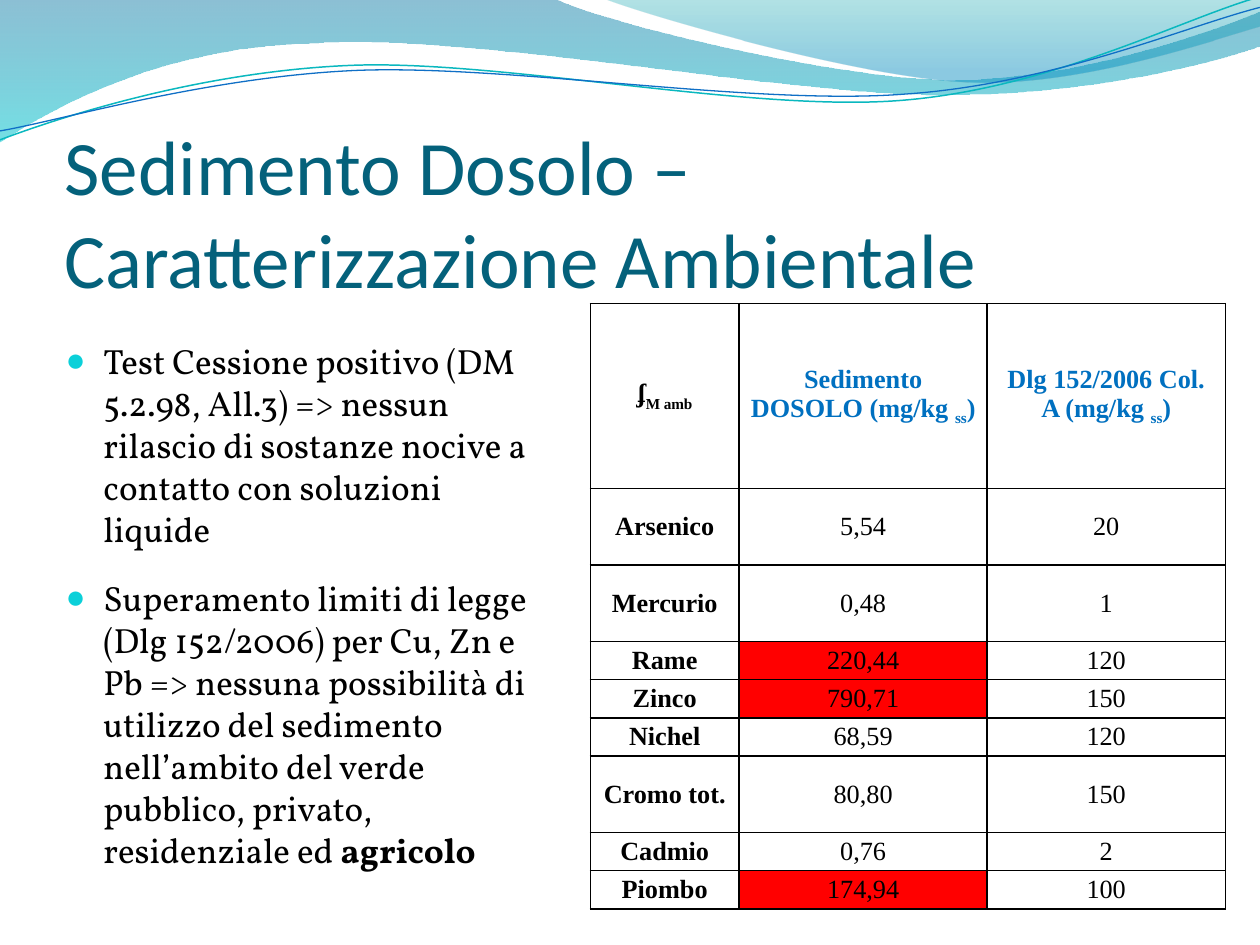
from lxml import etree
from pptx import Presentation
from pptx.dml.color import RGBColor
from pptx.enum.text import MSO_ANCHOR, MSO_AUTO_SIZE, PP_ALIGN
from pptx.oxml import parse_xml
from pptx.oxml.ns import nsdecls, qn
from pptx.util import Cm, Pt

LEFT, CENTER = PP_ALIGN.LEFT, PP_ALIGN.CENTER
MIDDLE, BOTTOM = MSO_ANCHOR.MIDDLE, MSO_ANCHOR.BOTTOM
NO_FIT = MSO_AUTO_SIZE.NONE


def rgb(color):
    return RGBColor.from_string(color)


def add_run(p, text, color, baseline=0, **fmt):
    r = p.add_run()
    r.text = text
    for key, value in fmt.items():
        setattr(r.font, key, value)
    r.font.color.rgb = rgb(color)
    if baseline:
        r.font._element.set("baseline", str(baseline * 1000))


prs = Presentation()
prs.slide_width, prs.slide_height = Cm(25.4), Cm(19.05)
s = prs.slides.add_slide(prs.slide_layouts[1])
s.background.fill.solid()
s.background.fill.fore_color.rgb = rgb("FFFFFF")
title, body = s.shapes.title, s.placeholders[1]

waves = [
    {"start": (0, 0), "stops": [(0, "0074A1", 45), (100, "00C6CF", 55)],
     "steps": [(11.18, -0.03), (12.09, 0.43, 16.87, 1.6, 19.25, 1.6),
               (21.67, 1.6, 24.33, 0.66, 25.4, 0.23), (25.43, 0.91),
               (24.97, 1.12, 22.1, 1.93, 18.95, 1.91),
               (15.8, 1.91, 9.7, 0.71, 6.53, 0.86),
               (3.28, 0.91, 1.17, 2.11, -0.03, 2.87), (0, 0)]},
    {"start": (12.17, -0.03), "stops": [(0, "00A1A9", 30), (80, "008BBF", 45)],
     "steps": [(12.93, 0.28, 17.32, 1.57, 19.53, 1.65),
               (21.74, 1.75, 24.41, 0.81, 25.4, 0.53), (25.4, 0), (12.17, -0.03)]},
    {"start": (0, 2.82), "line": ("0AB8BF", 0.85),
     "steps": [(1.22, 2.36, 4.01, 1.45, 7.04, 1.32),
               (10.03, 1.19, 15.06, 2.26, 18.11, 2.03),
               (21.16, 1.8, 23.83, 0.38, 25.35, -0.05)]},
    {"start": (0, 2.64), "line": ("0F6FC6", 0.75),
     "steps": [(1.19, 2.44, 4.17, 1.55, 7.19, 1.42),
               (10.24, 1.3, 15.16, 2.13, 18.21, 1.9),
               (21.23, 1.7, 23.9, 0.53, 25.4, 0.15)]},
]
for wave in waves:
    points = [(Cm(x), Cm(y)) for step in wave["steps"]
              for x, y in zip(step[::2], step[1::2])]
    x, y = wave["start"]
    builder = s.shapes.build_freeform(Cm(x), Cm(y))
    builder.add_line_segments(points, close="stops" in wave)
    sp = builder.convert_to_shape()
    sp.shadow.inherit = False
    spPr = sp._element.spPr
    segments = iter(list(spPr.iter(qn("a:lnTo"))))
    for step in wave["steps"]:
        first = next(segments)
        if len(step) == 6:
            first.tag = qn("a:cubicBezTo")
            for segment in (next(segments), next(segments)):
                first.append(segment[0])
                segment.getparent().remove(segment)
    sp.fill.background()
    if "line" in wave:
        color, width = wave["line"]
        sp.line.color.rgb = rgb(color)
        sp.line.width = Pt(width)
    else:
        sp.line.fill.background()
        stops = "".join(
            f'<a:gs pos="{pos * 1000}"><a:srgbClr val="{color}">'
            f'<a:alpha val="{alpha * 1000}"/></a:srgbClr></a:gs>'
            for pos, color, alpha in wave["stops"])
        spPr.replace(spPr.find(qn("a:noFill")), parse_xml(
            f'<a:gradFill {nsdecls("a")}><a:gsLst>{stops}</a:gsLst>'
            '<a:lin ang="5400000" scaled="0"/></a:gradFill>'))

frames = [(title, (1.3, 2.31, 22.86, 3.81)), (body, (1.07, 6.71, 10.24, 11.99))]
for sp, box in frames:
    for key, value in zip(("left", "top", "width", "height"), box):
        setattr(sp, key, Cm(value))
    sp.text_frame.auto_size = NO_FIT
    sp.text_frame.word_wrap = True

tf = title.text_frame
title_format = {"vertical_anchor": BOTTOM, "margin_left": 0, "margin_right": 0,
                "margin_top": Cm(0.13), "margin_bottom": 0}
for key, value in title_format.items():
    setattr(tf, key, value)
p = tf.paragraphs[0]
p.alignment = LEFT
title_font = {"name": "Calibri", "size": Pt(44)}
add_run(p, "Sedimento Dosolo – ", "04617B", **title_font)
p.add_line_break()
add_run(p, "Caratterizzazione Ambientale", "04617B", **title_font)
s.shapes._spTree.append(title._element)

rows = [
    ("Arsenico", "5,54", "20", 1.54),
    ("Mercurio", "0,48", "1", 1.54),
    ("Rame", "220,44", "120", 0.77),
    ("Zinco", "790,71", "150", 0.77),
    ("Nichel", "68,59", "120", 0.77),
    ("Cromo tot.", "80,80", "150", 1.54),
    ("Cadmio", "0,76", "2", 0.77),
    ("Piombo", "174,94", "100", 0.77),
]
over_limit = {"Rame", "Zinco", "Piombo"}
header = [
    ("000000", [("ʄ", 0), ("M amb", -25)]),
    ("0070C0", [("Sedimento DOSOLO (mg/kg ", 0), ("ss", -25), (")", 0)]),
    ("0070C0", [("Dlg 152/2006 Col. A (mg/kg ", 0), ("ss", -25), (")", 0)]),
]
grid = [header] + [[("000000", [(text, 0)]) for text in row[:3]] for row in rows]
table = s.shapes.add_table(len(grid), 3, Cm(11.9), Cm(6.12), Cm(12.8), Cm(12.2)).table
table.first_row = table.horz_banding = False
for column, width in zip(table.columns, (3, 5, 4.8)):
    column.width = Cm(width)
for row, height in zip(table.rows, [3.73] + [row[3] for row in rows]):
    row.height = Cm(height)

cell_format = {"vertical_anchor": MIDDLE, "margin_left": Cm(0.19),
               "margin_right": Cm(0.19), "margin_top": 0, "margin_bottom": 0}
for i, row in enumerate(grid):
    for j, (color, runs) in enumerate(row):
        cell = table.cell(i, j)
        for key, value in cell_format.items():
            setattr(cell, key, value)
        p = cell.text_frame.paragraphs[0]
        p.alignment = CENTER
        p.space_before = p.space_after = Pt(3)
        for text, baseline in runs:
            add_run(p, text, color, baseline, name="Times New Roman", size=Pt(15),
                    bold=i == 0 or j == 0)
        tcPr = cell._tc.get_or_add_tcPr()
        for side in ("lnL", "lnR", "lnT", "lnB"):
            tcPr.append(parse_xml(
                f'<a:{side} {nsdecls("a")} w="12700"><a:solidFill>'
                f'<a:srgbClr val="000000"/></a:solidFill></a:{side}>'))
        if j == 1 and i and rows[i - 1][0] in over_limit:
            cell.fill.solid()
            cell.fill.fore_color.rgb = rgb("FF0000")
        else:
            cell.fill.background()

bullets = [
    (4, [("Test Cessione positivo (DM 5.2.98, All.3) => nessun rilascio di sostanze "
          "nocive a contatto con soluzioni liquide", False)]),
    (15.4, [("Superamento limiti di legge (Dlg 152/2006) per Cu, Zn e Pb => nessuna "
             "possibilità di utilizzo del sedimento nell’ambito del verde pubblico, "
             "privato, residenziale ed ", False), ("agricolo", True)]),
]
tf = body.text_frame
for i, (gap, runs) in enumerate(bullets):
    p = tf.add_paragraph() if i else tf.paragraphs[0]
    p.space_before = Pt(gap)
    for text, bold in runs:
        add_run(p, text, "000000", name="Vollkorn", size=Pt(20), bold=bold)
    pPr = p._p.get_or_add_pPr()
    pPr.set("marL", str(Cm(0.76)))
    pPr.set("indent", str(-Cm(0.76)))
    bullet_color = etree.SubElement(pPr, qn("a:buClr"))
    etree.SubElement(bullet_color, qn("a:srgbClr"), val="0BD0D9")
    etree.SubElement(pPr, qn("a:buSzPct"), val="95000")
    etree.SubElement(pPr, qn("a:buChar"), char="●")
s.shapes._spTree.append(body._element)

prs.save("out.pptx")
